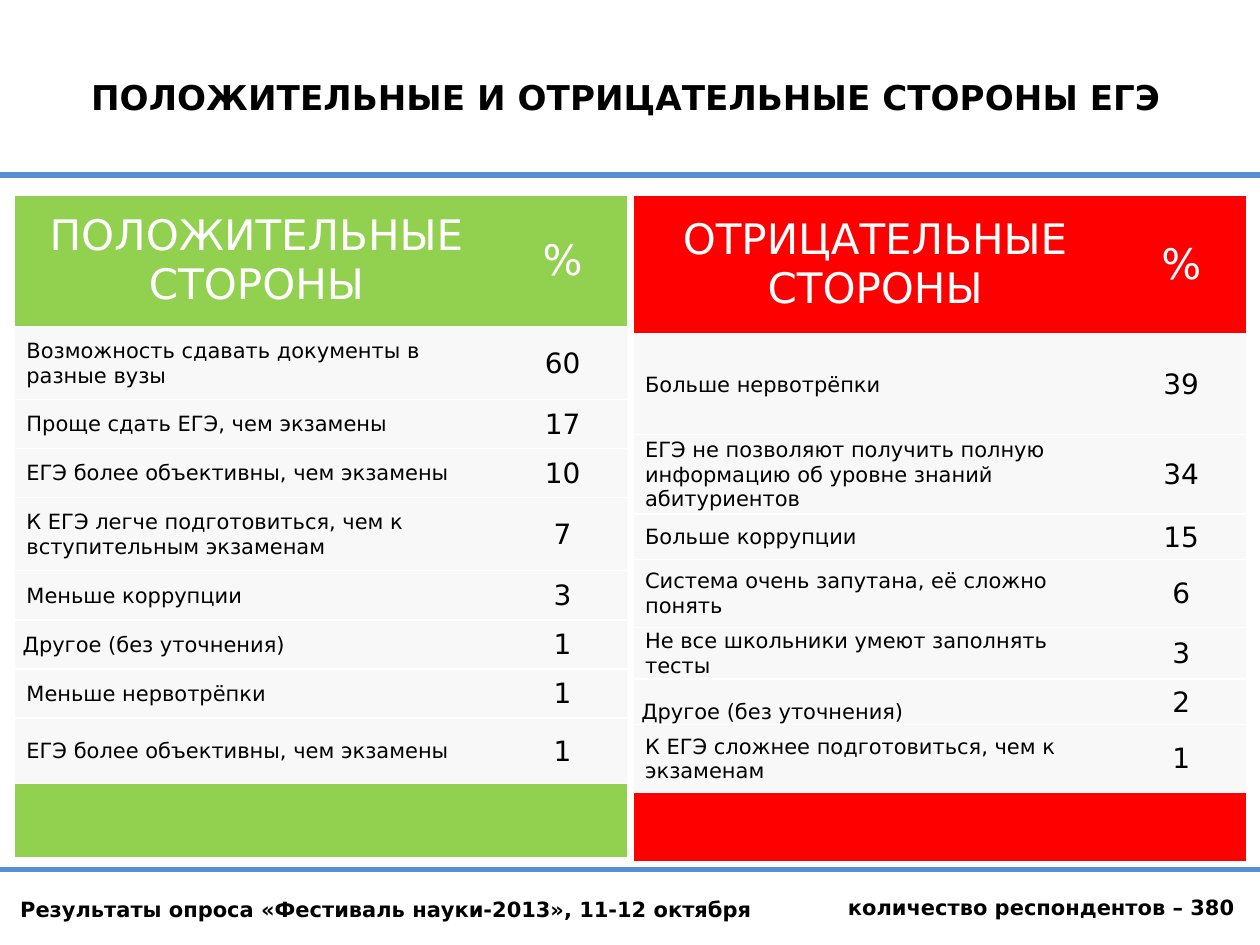
from dataclasses import dataclass

from lxml import etree
from pptx import Presentation
from pptx.dml.color import RGBColor
from pptx.enum.shapes import MSO_CONNECTOR
from pptx.enum.text import MSO_ANCHOR, PP_ALIGN
from pptx.oxml.ns import qn
from pptx.util import Inches, Pt

STRAIGHT = MSO_CONNECTOR.STRAIGHT
MIDDLE, BOTTOM, TOP = MSO_ANCHOR.MIDDLE, MSO_ANCHOR.BOTTOM, MSO_ANCHOR.TOP
LEFT, CENTER = PP_ALIGN.LEFT, PP_ALIGN.CENTER
FONT = "DejaVu Sans"
COLORS = {"rule": "558ED5", "text": "000000", "white": "FFFFFF",
          "positive": "92D050", "negative": "FF0000", "body": "F2F2F2"}
COLUMN_WIDTHS = (3.83, 1.03)
TABLE_TOP = 1.55
HEADER_INSETS = (0.02, 0.02, 0.02, 0.02)
ANSWER_INSETS = (0.09, 0.01, 0.01, 0)
VALUE_INSETS = (0.01, 0.01, 0.01, 0)


@dataclass
class Answer:
    text: str
    percent: int
    height: float
    insets: tuple = ANSWER_INSETS
    anchor: MSO_ANCHOR = MIDDLE


@dataclass
class Side:
    title: str
    color: str
    left: float
    header_height: float
    footer_height: float
    answers: list[Answer]


OTHER = "Другое (без уточнения)"
OTHER_INSETS = (0.06, 0.01, 0.01, 0)
SIDES = [
    Side("ПОЛОЖИТЕЛЬНЫЕ СТОРОНЫ", "positive", 0.12, 1.04, 0.59, [
        Answer("Возможность сдавать документы в разные вузы", 60, 0.58),
        Answer("Проще сдать ЕГЭ, чем экзамены", 17, 0.39),
        Answer("ЕГЭ более объективны, чем экзамены", 10, 0.39),
        Answer("К ЕГЭ легче подготовиться, чем к вступительным экзаменам", 7, 0.58),
        Answer("Меньше коррупции", 3, 0.39),
        Answer(OTHER, 1, 0.39, OTHER_INSETS),
        Answer("Меньше нервотрёпки", 1, 0.39),
        Answer("ЕГЭ более объективны, чем экзамены", 1, 0.52),
    ]),
    Side("ОТРИЦАТЕЛЬНЫЕ СТОРОНЫ", "negative", 5.03, 1.1, 0.55, [
        Answer("Больше нервотрёпки", 39, 0.8),
        Answer("ЕГЭ не позволяют получить полную информацию об уровне знаний "
               "абитуриентов", 34, 0.63),
        Answer("Больше коррупции", 15, 0.36),
        Answer("Система очень запутана, её сложно понять", 6, 0.54),
        Answer("Не все школьники умеют заполнять тесты", 3, 0.36),
        Answer(OTHER, 2, 0.36, OTHER_INSETS, BOTTOM),
        Answer("К ЕГЭ сложнее подготовиться, чем к экзаменам", 1, 0.54),
    ]),
]


def rgb(name: str) -> RGBColor:
    return RGBColor.from_string(COLORS[name])


def set_text(frame, text: str, size: float, color: str, align, bold=False) -> None:
    paragraph = frame.paragraphs[0]
    paragraph.text = text
    paragraph.alignment = align
    font = paragraph.font
    font.name, font.size, font.bold = FONT, Pt(size), bold
    font.color.rgb = rgb(color)


def set_insets(target, insets: tuple) -> None:
    (target.margin_left, target.margin_right,
     target.margin_top, target.margin_bottom) = map(Inches, insets)


def style_cell(cell, color: str, opacity: int = 100) -> None:
    """Fill the cell and leave only white lines above and below it."""
    cell.fill.solid()
    cell.fill.fore_color.rgb = rgb(color)
    properties = cell._tc.get_or_add_tcPr()
    if opacity < 100:
        fill_color = properties.find(".//" + qn("a:srgbClr"))
        etree.SubElement(fill_color, qn("a:alpha"), val=str(opacity * 1000))
    for index, edge in enumerate(("lnL", "lnR", "lnT", "lnB")):
        line = etree.Element(qn(f"a:{edge}"), w=str(Pt(1)))
        if edge in ("lnT", "lnB"):
            fill = etree.SubElement(line, qn("a:solidFill"))
            etree.SubElement(fill, qn("a:srgbClr"), val=COLORS["white"])
        else:
            etree.SubElement(line, qn("a:noFill"))
        properties.insert(index, line)


def write_cell(cell, text: str, size: float, color: str, align, insets: tuple,
               anchor=MIDDLE) -> None:
    set_text(cell.text_frame, text, size, color, align)
    set_insets(cell, insets)
    cell.vertical_anchor = anchor


def add_side(slide, side: Side) -> None:
    heights = [side.header_height, *(a.height for a in side.answers),
               side.footer_height]
    table = slide.shapes.add_table(
        len(heights), 2, Inches(side.left), Inches(TABLE_TOP),
        Inches(sum(COLUMN_WIDTHS)), Inches(sum(heights))).table
    for column, width in zip(table.columns, COLUMN_WIDTHS):
        column.width = Inches(width)
    for row, height in zip(table.rows, heights):
        row.height = Inches(height)

    # Header and footer bands
    for cell, text in zip(table.rows[0].cells, (side.title, "%")):
        style_cell(cell, side.color)
        write_cell(cell, text, 24, "white", CENTER, HEADER_INSETS)
    last = len(heights) - 1
    table.cell(last, 0).merge(table.cell(last, 1))
    for cell in table.rows[last].cells:
        style_cell(cell, side.color)

    # Answers with their shares
    for number, answer in enumerate(side.answers, start=1):
        label, value = table.cell(number, 0), table.cell(number, 1)
        for cell in (label, value):
            style_cell(cell, "body", 50)
        write_cell(label, answer.text, 12, "text", LEFT, answer.insets, answer.anchor)
        write_cell(value, str(answer.percent), 16, "text", CENTER, VALUE_INSETS)


def add_rule(slide, y: float) -> None:
    rule = slide.shapes.add_connector(STRAIGHT, 0, Inches(y), Inches(10), Inches(y))
    rule.line.color.rgb = rgb("rule")
    rule.line.width = Pt(3)
    etree.SubElement(rule._element.spPr, qn("a:effectLst"))


def add_label(slide, box: tuple, text: str, size: float, align=LEFT,
              anchor=TOP, left_inset: float = 0.1) -> None:
    frame = slide.shapes.add_textbox(*map(Inches, box)).text_frame
    frame.word_wrap = True
    frame.vertical_anchor = anchor
    set_insets(frame, (left_inset, 0.1, 0.05, 0.05))
    set_text(frame, text, size, "text", align, bold=True)


def main() -> None:
    prs = Presentation()
    prs.slide_width, prs.slide_height = Inches(10), Inches(7.5)
    slide = prs.slides.add_slide(prs.slide_layouts[6])

    # Rules above and below the tables
    for y in (1.39, 6.9):
        add_rule(slide, y)

    # Survey details
    add_label(slide, (0, 7.07, 6.42, 0.3),
              "Результаты опроса «Фестиваль науки-2013», 11-12 октября", 12,
              left_inset=0.16)
    add_label(slide, (6.57, 7.05, 3.43, 0.3), "количество респондентов – 380", 12,
              left_inset=0.16)

    for side in SIDES:
        add_side(slide, side)

    # Title
    add_label(slide, (-0.05, 0.14, 10.04, 1.25),
              "ПОЛОЖИТЕЛЬНЫЕ И ОТРИЦАТЕЛЬНЫЕ СТОРОНЫ ЕГЭ", 19.5, CENTER, MIDDLE)
    prs.save("out.pptx")


if __name__ == "__main__":
    main()
